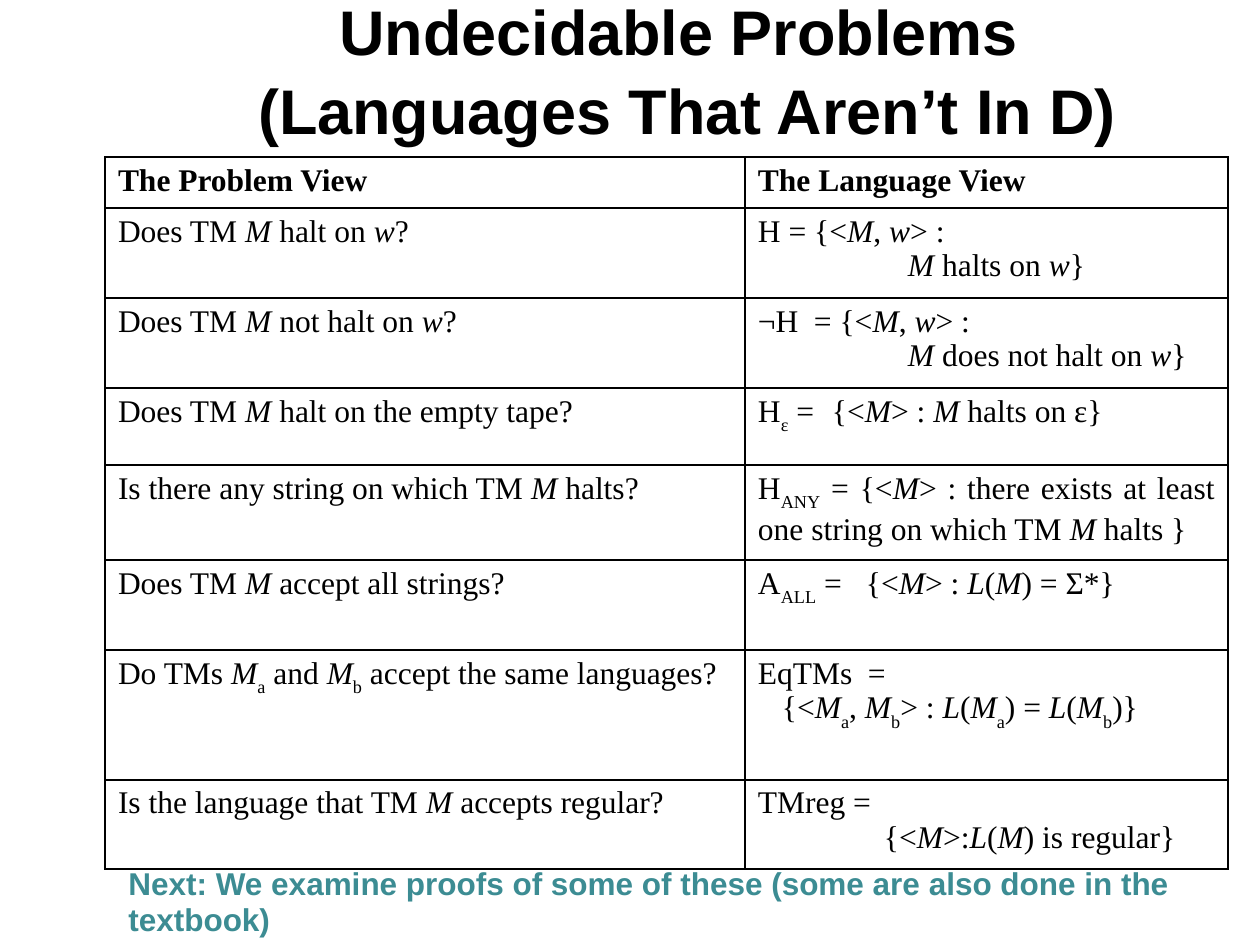
"""Build a slide listing undecidable problems beside their languages."""
from dataclasses import dataclass
from itertools import product

from lxml.etree import SubElement
from pptx import Presentation
from pptx.dml.color import RGBColor
from pptx.enum.text import MSO_ANCHOR as Anchor, PP_ALIGN as Align
from pptx.oxml.ns import qn
from pptx.util import Emu, Pt

EMU_PER_PX = 914400 / 126
COLORS = {"ink": "000000", "note": "3C8C93"}
SERIF, SANS = "Times New Roman", "Arial"
COLUMN_WIDTHS = [640, 483]


@dataclass(frozen=True)
class Line:
    text: str
    indent: int = 0
    tab: int = 0


@dataclass(frozen=True)
class Problem:
    height: int
    question: str
    language: tuple[Line, ...]
    bold: bool = False


PROBLEMS = [
    Problem(51, "The Problem View", (Line("The Language View"),), bold=True),
    Problem(90, "Does TM ~M~ halt on ~w~?",
            (Line("H = {<~M~, ~w~> :"), Line("~M~ halts on ~w~}", indent=150))),
    Problem(90, "Does TM ~M~ not halt on ~w~?",
            (Line("¬H\t= {<~M~, ~w~> :", tab=56),
             Line("~M~ does not halt on ~w~}", indent=150))),
    Problem(77, "Does TM ~M~ halt on the empty tape?",
            (Line("H_ε_ =\t{<~M~> : ~M~ halts on ε}", tab=74),)),
    Problem(95, "Is there any string on which TM ~M~ halts?",
            (Line("H_ANY_ = {<~M~> : there exists at least one string "
                  "on which TM ~M~ halts }"),)),
    Problem(90, "Does TM ~M~ accept all strings?",
            (Line("A_ALL_ =\t{<~M~> : ~L~(~M~) = Σ*}", tab=108),)),
    Problem(130, "Do TMs ~M~_a_ and ~M~_b_ accept the same languages?",
            (Line("EqTMs\t=", tab=110),
             Line("{<~M~_a_, ~M~_b_> : ~L~(~M~_a_) = ~L~(~M~_b_)}", indent=24))),
    Problem(89, "Is the language that TM ~M~ accepts regular?",
            (Line("TMreg ="), Line("{<~M~>:~L~(~M~) is regular}", indent=126))),
]


def px(length: int) -> Emu:
    """Turn pixels into EMU."""
    return Emu(round(length * EMU_PER_PX))


def write(para, text: str, *, font: str = SERIF, size: int = 18,
          color: str = "ink", bold: bool = False, align=Align.LEFT,
          spacing: float = 1.0) -> None:
    """Write text in which ~x~ is italic and _x_ is a subscript."""
    para.alignment = align
    para.line_spacing = spacing
    for i, italic_part in enumerate(text.split("~")):
        for j, piece in enumerate(italic_part.split("_")):
            if not piece:
                continue
            span = para.add_run()
            span.text = piece
            span.font.name, span.font.size = font, Pt(size)
            span.font.bold, span.font.italic = bold, i % 2 == 1
            span.font.color.rgb = RGBColor.from_string(COLORS[color])
            if j % 2:
                span._r.get_or_add_rPr().set("baseline", "-30000")


def add_borders(cell) -> None:
    """Draw a thin line on every side of a cell."""
    properties = cell._tc.get_or_add_tcPr()
    for side in ("lnL", "lnR", "lnT", "lnB"):
        border = SubElement(properties, qn(f"a:{side}"), w=str(Pt(1)))
        fill = SubElement(border, qn("a:solidFill"))
        SubElement(fill, qn("a:srgbClr"), val=COLORS["ink"])


def fill_cell(cell, lines: tuple[Line, ...], bold: bool) -> None:
    """Format a cell and write its lines."""
    cell.margin_left = cell.margin_right = px(13)
    cell.margin_top = cell.margin_bottom = px(6)
    cell.vertical_anchor = Anchor.TOP
    add_borders(cell)
    cell.fill.background()
    for index, line in enumerate(lines):
        frame = cell.text_frame
        para = frame.add_paragraph() if index else frame.paragraphs[0]
        properties = para._p.get_or_add_pPr()
        if line.indent:
            properties.set("marL", str(px(line.indent)))
        if line.tab:
            tabs = SubElement(properties, qn("a:tabLst"))
            SubElement(tabs, qn("a:tab"), pos=str(px(line.tab)), algn="l")
        write(para, line.text, bold=bold, align=Align.JUSTIFY)


def add_title(page) -> None:
    """Place and write the title."""
    title = page.shapes.title
    title.left, title.top, title.width, title.height = map(px, (105, 10, 1165, 116))
    frame = title.text_frame
    frame.word_wrap = True
    frame.vertical_anchor = Anchor.MIDDLE
    para = frame.paragraphs[0]
    style = dict(font=SANS, size=36, bold=True, align=Align.CENTER, spacing=1.05)
    write(para, "Undecidable Problems ", **style)
    para.add_line_break()
    write(para, "(Languages That Aren’t In D)", **style)


def add_problem_table(page) -> None:
    """Add the table of problems and languages."""
    heights = [problem.height for problem in PROBLEMS]
    frame = page.shapes.add_table(len(PROBLEMS), len(COLUMN_WIDTHS), px(105), px(157),
                                  px(sum(COLUMN_WIDTHS)), px(sum(heights)))
    table = frame.table
    table.first_row = table.horz_banding = False
    for column, width in zip(table.columns, COLUMN_WIDTHS):
        column.width = px(width)
    for row, height in zip(table.rows, heights):
        row.height = px(height)
    for row, column in product(range(len(PROBLEMS)), range(len(COLUMN_WIDTHS))):
        problem = PROBLEMS[row]
        lines = problem.language if column else (Line(problem.question),)
        fill_cell(table.cell(row, column), lines, problem.bold)


def add_note(page) -> None:
    """Add the note below the table."""
    box = page.shapes.add_textbox(*map(px, (116, 861, 1140, 84)))
    box.text_frame.word_wrap = True
    write(box.text_frame.paragraphs[0],
          "Next: We examine proofs of some of these "
          "(some are also done in the textbook)",
          font=SANS, color="note", bold=True, spacing=0.95)


def main() -> None:
    """Build and save the deck."""
    deck = Presentation()
    deck.slide_width, deck.slide_height = px(1260), px(945)
    page = deck.slides.add_slide(deck.slide_layouts[5])
    add_title(page)
    add_problem_table(page)
    add_note(page)
    deck.save("out.pptx")


if __name__ == "__main__":
    main()
